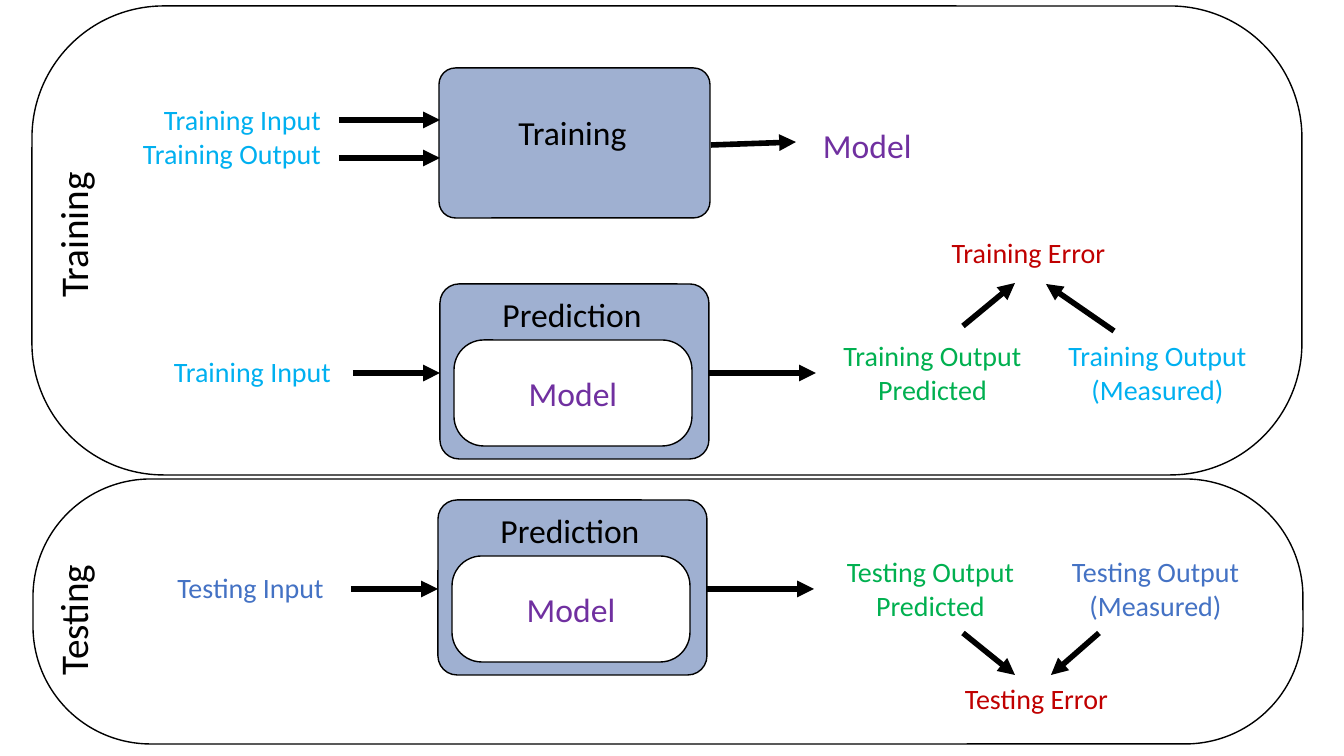
"""Build a slide showing how a model is trained, evaluated and tested."""
import pptx
import pptx.util
import pptx.dml.color
import pptx.enum.shapes
import pptx.enum.text
import pptx.oxml
import pptx.oxml.ns

PX = 914400 / 100.8
BLACK, WHITE, STEEL = "000000", "FFFFFF", "9FB0D1"
CYAN, BLUE, GREEN = "00B0F0", "4472C4", "00B050"
PURPLE, RED = "7030A0", "C00000"
FONT = "Calibri"
ALIGN = pptx.enum.text.PP_ALIGN
ANCHOR = pptx.enum.text.MSO_ANCHOR

PANELS = [
    ("Testing", (33, 479, 1270, 265), 0.444, (-50, 590, 245, 60)),
    ("Training", (32, 6, 1270, 469), 0.281, (-50, 205, 245, 60)),
]
PREDICTIONS = [
    ("Training", 440, 284, CYAN),
    ("Testing", 438, 500, BLUE),
]
ERRORS = [
    ("Training Error", (906, 206, 245, 92)),
    ("Testing Error", (914, 652, 245, 92)),
]
TRAINING_ARROWS = [
    (339, 120, 440, 120),
    (339, 158, 440, 158),
    (711, 145, 796, 142),
]
ERROR_ARROWS = [
    (963, 326, 1015, 283),
    (1114, 331, 1046, 284),
    (963, 633, 1015, 675),
    (1099, 633, 1051, 675),
]


def emu(*lengths):
    return [pptx.util.Emu(round(n * PX)) for n in lengths]


def rgb(color):
    return pptx.dml.color.RGBColor.from_string(color)


def set_text(sp, text, size, color, align=ALIGN.CENTER, anchor=ANCHOR.MIDDLE, side=4):
    tf = sp.text_frame
    tf.word_wrap = True
    tf.vertical_anchor = anchor
    tf.margin_left = tf.margin_right = emu(side)[0]
    tf.margin_top = tf.margin_bottom = 0
    tf.text = text
    for p in tf.paragraphs:
        p.alignment = align
        for r in p.runs:
            r.font.size = pptx.util.Pt(size)
            r.font.name = FONT
            r.font.color.rgb = rgb(color)


def add_label(s, box, text, size, color, **layout):
    sp = s.shapes.add_textbox(*emu(*box))
    set_text(sp, text, size, color, **layout)
    return sp


def add_box(s, box, corner, fill):
    kind = pptx.enum.shapes.MSO_SHAPE.ROUNDED_RECTANGLE
    sp = s.shapes.add_shape(kind, *emu(*box))
    sp.adjustments[0] = corner
    sp.shadow.inherit = False
    sp.fill.solid()
    sp.fill.fore_color.rgb = rgb(fill)
    sp.line.color.rgb = rgb(BLACK)
    sp.line.width = pptx.util.Pt(1)
    return sp


def add_arrow(s, *ends):
    kind = pptx.enum.shapes.MSO_CONNECTOR.STRAIGHT
    cxn = s.shapes.add_connector(kind, *emu(*ends))
    cxn.line.color.rgb = rgb(BLACK)
    cxn.line.width = pptx.util.Pt(4)
    tail = pptx.oxml.parse_xml(f'<a:tailEnd {pptx.oxml.ns.nsdecls("a")} type="triangle"/>')
    cxn.line._get_or_add_ln().append(tail)
    effects = pptx.oxml.parse_xml(f'<a:effectLst {pptx.oxml.ns.nsdecls("a")}/>')
    cxn._element.spPr.append(effects)


def add_training(s):
    add_label(s, (101, 49, 224, 175), "Training Input\nTraining Output", 20, CYAN,
              align=ALIGN.RIGHT)
    add_box(s, (439, 68, 271, 150), 0.109, STEEL)
    add_label(s, (468, 112, 209, 46), "Training", 24, BLACK, anchor=ANCHOR.TOP)
    add_label(s, (819, 67, 219, 157), "Model", 24, PURPLE, align=ALIGN.LEFT)
    for ends in TRAINING_ARROWS:
        add_arrow(s, *ends)


def add_prediction(s, phase, x, y, color):
    add_label(s, (x - 310, y + 41, 245, 92), f"{phase} Input", 20, color)
    add_box(s, (x, y, 269, 175), 0.109, STEEL)
    add_label(s, (x + 28, y + 10, 208, 37), "Prediction", 24, BLACK, anchor=ANCHOR.TOP)
    add_arrow(s, x - 87, y + 89, x, y + 89)
    add_arrow(s, x + 269, y + 89, x + 376, y + 89)
    model = add_box(s, (x + 14, y + 56, 238, 106), 0.281, WHITE)
    set_text(model, "Model", 24, PURPLE, side=0)
    add_label(s, (x + 374, y + 36, 237, 105), f"{phase} Output Predicted", 20, GREEN)
    add_label(s, (x + 599, y + 36, 237, 105), f"{phase} Output (Measured)", 20, color)


def main():
    prs = pptx.Presentation()
    prs.slide_width, prs.slide_height = emu(1344, 756)
    s = prs.slides.add_slide(prs.slide_layouts[6])
    for name, box, corner, label_box in PANELS:
        add_box(s, box, corner, WHITE)
        add_label(s, label_box, name, 28, BLACK).rotation = 270
    add_training(s)
    for prediction in PREDICTIONS:
        add_prediction(s, *prediction)
    for text, box in ERRORS:
        add_label(s, box, text, 20, RED)
    for ends in ERROR_ARROWS:
        add_arrow(s, *ends)
    prs.save("out.pptx")


if __name__ == "__main__":
    main()
